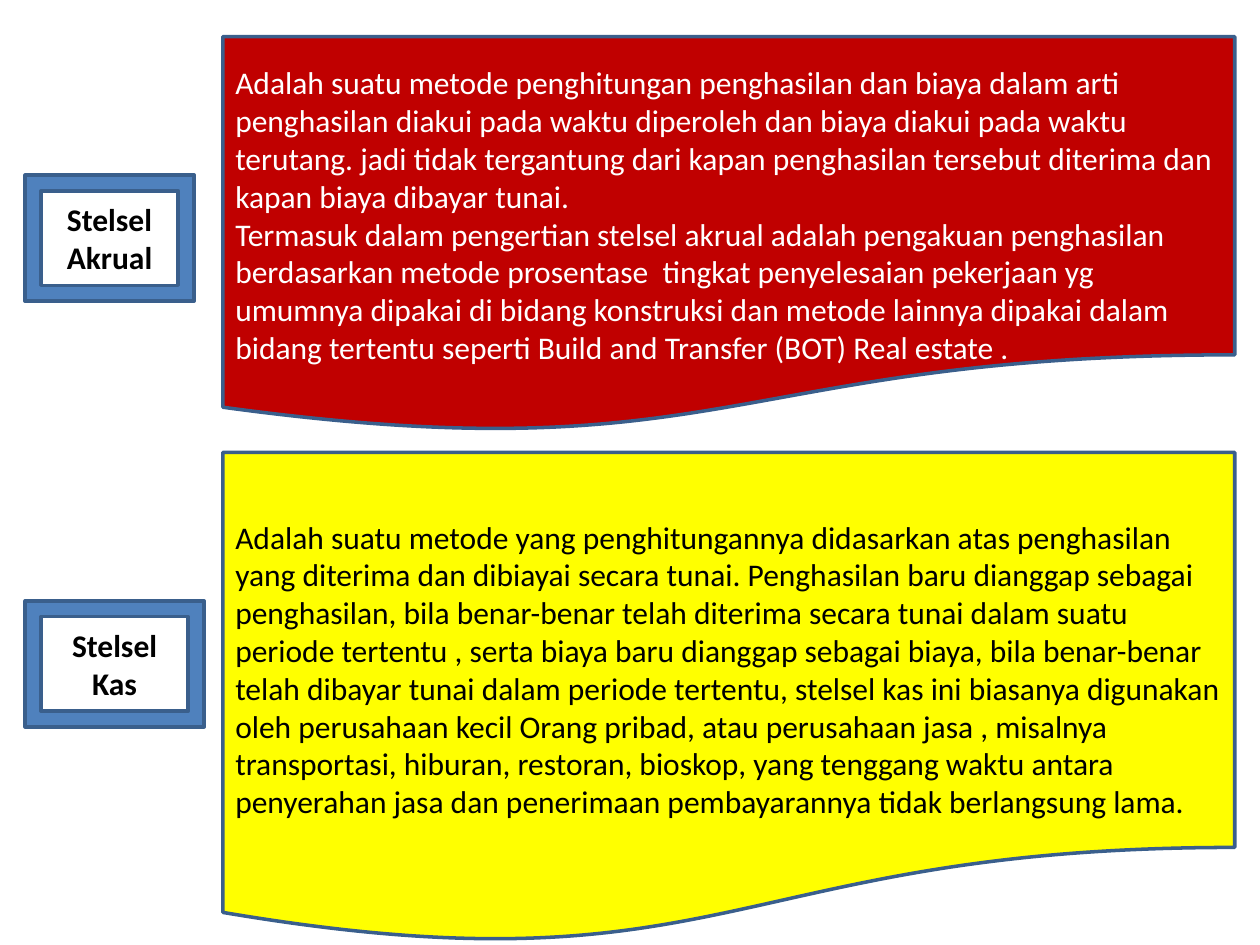
import pptx
import pptx.dml.color
import pptx.enum.shapes
import pptx.enum.text
import pptx.util

Pt = pptx.util.Pt
RGBColor = pptx.dml.color.RGBColor
SHAPE = pptx.enum.shapes.MSO_SHAPE
ALIGN = pptx.enum.text.PP_ALIGN

BLUE = RGBColor(0x4F, 0x81, 0xBD)
OUTLINE = RGBColor(0x3A, 0x5F, 0x8C)
RED = RGBColor(0xC0, 0x00, 0x00)
YELLOW = RGBColor(0xFF, 0xFF, 0x00)
BLACK = RGBColor(0x00, 0x00, 0x00)
WHITE = RGBColor(0xFF, 0xFF, 0xFF)

# Vertical extents are (top, height) in points.
METHODS = [
    {
        "label": "Stelsel Akrual", "label_top": 100.1, "label_width": 96.5,
        "panel": (20.9, 226.8), "fill": RED, "ink": WHITE,
        "description": [
            "Adalah suatu metode penghitungan penghasilan dan biaya dalam arti "
            "penghasilan diakui pada waktu diperoleh dan biaya diakui pada waktu "
            "terutang. jadi tidak tergantung dari kapan penghasilan tersebut "
            "diterima dan kapan biaya dibayar tunai.",
            "Termasuk dalam pengertian stelsel akrual adalah pengakuan "
            "penghasilan  berdasarkan metode prosentase  tingkat penyelesaian "
            "pekerjaan yg umumnya dipakai di bidang konstruksi dan metode lainnya "
            "dipakai dalam bidang tertentu seperti Build and Transfer (BOT) "
            "Real estate .",
        ],
    },
    {
        "label": "Stelsel Kas", "label_top": 343.4, "label_width": 102.2,
        "panel": (258.5, 281.5), "fill": YELLOW, "ink": BLACK,
        "description": [
            "Adalah suatu metode yang penghitungannya didasarkan atas penghasilan "
            "yang diterima dan dibiayai secara tunai. Penghasilan baru dianggap "
            "sebagai penghasilan, bila benar-benar telah diterima secara tunai "
            "dalam suatu periode tertentu , serta biaya baru dianggap sebagai "
            "biaya, bila benar-benar telah dibayar tunai dalam periode tertentu, "
            "stelsel kas ini biasanya digunakan oleh perusahaan kecil Orang "
            "pribad, atau perusahaan jasa , misalnya transportasi, hiburan, "
            "restoran, bioskop, yang tenggang waktu antara penyerahan jasa dan "
            "penerimaan pembayarannya tidak berlangsung lama.",
        ],
    },
]

LABEL_LEFT, LABEL_HEIGHT = 14.4, 72
PANEL_LEFT, PANEL_WIDTH = 127.4, 578.2
PANEL_TOP_INSET = 25.2  # normal inset plus one line of text


def add_block(slide, preset, box, fill, paragraphs, ink, align, bold=False):
    """Add an outlined shape with vertically centred text; return its text frame."""
    block = slide.shapes.add_shape(preset, *map(Pt, box))
    block.shadow.inherit = False
    block.fill.solid()
    block.fill.fore_color.rgb = fill
    block.line.color.rgb = OUTLINE
    block.line.width = Pt(2)
    frame = block.text_frame
    frame.word_wrap = True
    frame.vertical_anchor = pptx.enum.text.MSO_ANCHOR.MIDDLE
    frame.text = "\n".join(paragraphs)
    for paragraph in frame.paragraphs:
        paragraph.alignment = align
        paragraph.font.name = "Calibri"
        paragraph.font.size = Pt(18)
        paragraph.font.bold = bold
        paragraph.font.color.rgb = ink
    return frame


def main():
    deck = pptx.Presentation()
    deck.slide_width, deck.slide_height = Pt(720), Pt(540)
    slide = deck.slides.add_slide(deck.slide_layouts[6])
    for method in METHODS:
        label_box = (LABEL_LEFT, method["label_top"],
                     method["label_width"], LABEL_HEIGHT)
        add_block(slide, SHAPE.FRAME, label_box, BLUE, [method["label"]],
                  BLACK, ALIGN.CENTER, bold=True)
        top, height = method["panel"]
        description = add_block(
            slide, SHAPE.FLOWCHART_DOCUMENT,
            (PANEL_LEFT, top, PANEL_WIDTH, height),
            method["fill"], method["description"], method["ink"], ALIGN.LEFT)
        description.margin_top = Pt(PANEL_TOP_INSET)
    deck.save("out.pptx")


if __name__ == "__main__":
    main()
